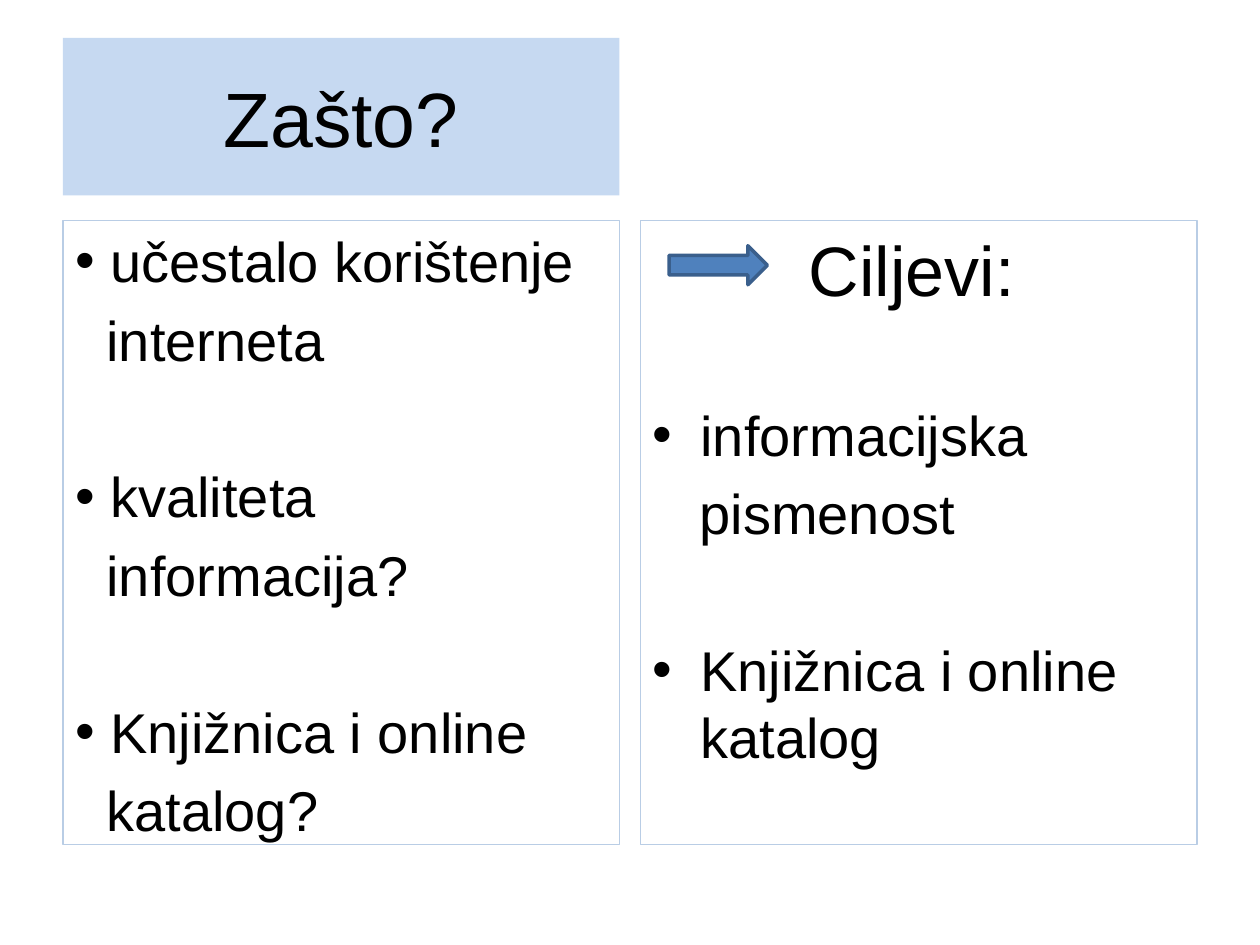
"""Build the "Zašto?" slide: a title band, two bulleted panels and an arrow."""
from dataclasses import dataclass

from lxml.etree import SubElement
from pptx import Presentation
from pptx.dml.color import RGBColor
from pptx.enum.shapes import MSO_SHAPE as Shape
from pptx.enum.text import MSO_ANCHOR as Anchor, MSO_AUTO_SIZE as AutoSize, PP_ALIGN as Align
from pptx.oxml.ns import qn
from pptx.util import Pt

COLORS = {"band": "C6D9F1", "border": "B9CDE5", "arrow": "4F81BD",
          "arrow_edge": "3A5F8C", "text": "000000"}
LEFT, RIGHT, COL_W = 36, 366, 318
PANEL_TOP, PANEL_H = 126, 356.4
GAP, SECTION_GAP = 6.4, 51.2


@dataclass(frozen=True)
class Line:
    text: str
    margin: float
    bullet: bool = False
    before: float = GAP
    size: float = 32


@dataclass(frozen=True)
class Box:
    left: float
    top: float
    width: float
    height: float
    fill: str = ""
    edge: str = ""
    edge_width: float = 0.75
    kind: Shape = Shape.RECTANGLE


def add_box(s, box: Box):
    """Draw a shape with optional fill and outline and return it."""
    sp = s.shapes.add_shape(box.kind, Pt(box.left), Pt(box.top), Pt(box.width), Pt(box.height))
    sp.shadow.inherit = False
    for fmt, color in ((sp.fill, box.fill), (sp.line.fill, box.edge)):
        if color:
            fmt.solid()
            fmt.fore_color.rgb = RGBColor.from_string(COLORS[color])
        else:
            fmt.background()
    if box.edge:
        sp.line.width = Pt(box.edge_width)
    return sp


def add_lines(sp, lines: list[Line], align: Align, anchor: Anchor) -> None:
    """Fill a shape with one paragraph per line."""
    tf = sp.text_frame
    frame = {"word_wrap": True, "auto_size": AutoSize.NONE, "vertical_anchor": anchor}
    for name, value in frame.items():
        setattr(tf, name, value)
    for i, line in enumerate(lines):
        p = tf.add_paragraph() if i else tf.paragraphs[0]
        p.alignment, p.space_before = align, Pt(line.before)
        pPr = p._p.get_or_add_pPr()
        pPr.set("marL", str(Pt(line.margin)))
        pPr.set("indent", str(-Pt(line.margin) if line.bullet else 0))
        if line.bullet:
            SubElement(pPr, qn("a:buFont"), typeface="Arial")
            SubElement(pPr, qn("a:buChar"), char="•")
        r = p.add_run()
        r.text = line.text
        for name, value in {"name": "Arial", "size": Pt(line.size)}.items():
            setattr(r.font, name, value)
        r.font.color.rgb = RGBColor.from_string(COLORS["text"])


def main() -> None:
    """Create and save the presentation."""
    prs = Presentation()
    prs.slide_width, prs.slide_height = Pt(720), Pt(540)
    s = prs.slides.add_slide(prs.slide_layouts[6])

    title = add_box(s, Box(LEFT, 21.6, COL_W, 90, fill="band"))
    add_lines(title, [Line("Zašto?", 0, before=0, size=44)], Align.CENTER, Anchor.MIDDLE)

    questions = [("učestalo korištenje", "interneta"), ("kvaliteta", "informacija?"),
                 ("Knjižnica i online", "katalog?")]
    reasons = []
    for i, (first, rest) in enumerate(questions):
        reasons += [Line(first, 20, True, SECTION_GAP if i else 0), Line(rest, 17.8)]
    goals = [
        Line("Ciljevi:", 89, before=0, size=40),
        Line("informacijska", 27.2, True, SECTION_GAP),
        Line("pismenost", 26.7),
        Line("Knjižnica i online katalog", 27.2, True, SECTION_GAP),
    ]
    for left, lines in ((LEFT, reasons), (RIGHT, goals)):
        panel = add_box(s, Box(left, PANEL_TOP, COL_W, PANEL_H, edge="border"))
        add_lines(panel, lines, Align.LEFT, Anchor.TOP)

    add_box(s, Box(382.3, 140.4, 56.2, 22.3, "arrow", "arrow_edge", 2, Shape.RIGHT_ARROW))
    prs.save("out.pptx")


if __name__ == "__main__":
    main()
